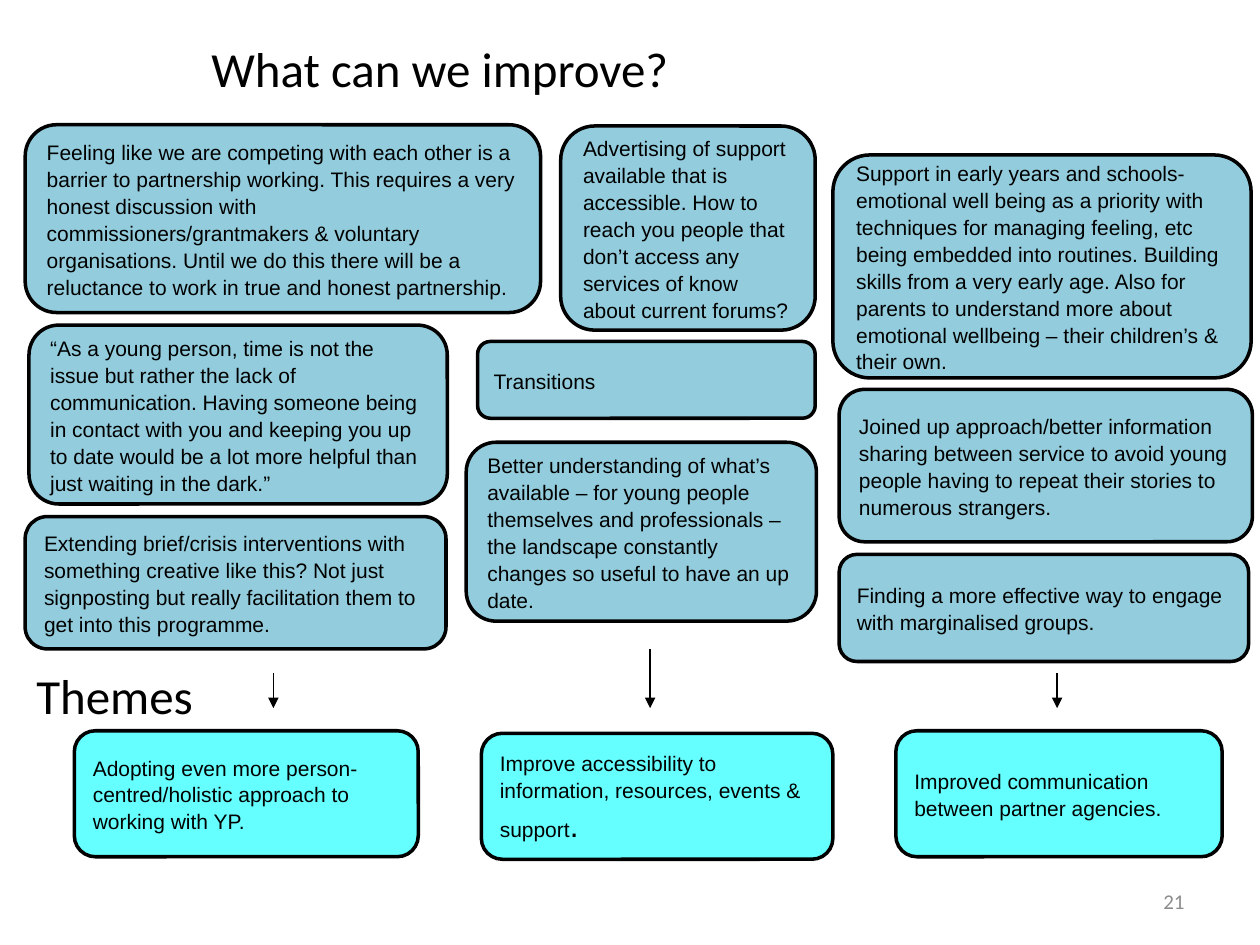
from lxml import etree
from pptx import Presentation
from pptx.dml.color import RGBColor
from pptx.enum.shapes import MSO_CONNECTOR, MSO_SHAPE
from pptx.enum.text import MSO_ANCHOR, PP_ALIGN
from pptx.oxml.ns import qn
from pptx.util import Inches, Pt

ROUNDED = MSO_SHAPE.ROUNDED_RECTANGLE
STRAIGHT = MSO_CONNECTOR.STRAIGHT
LEFT, CENTER, RIGHT = PP_ALIGN.LEFT, PP_ALIGN.CENTER, PP_ALIGN.RIGHT
TOP, MIDDLE = MSO_ANCHOR.TOP, MSO_ANCHOR.MIDDLE

COLORS = {"ink": "000000", "comment": "93CDDD", "theme": "66FFFF", "number": "8C8C8C"}

COMMENTS = [
    ((0.2, 0.99, 4.09, 1.49),
     "Feeling like we are competing with each other is a barrier to partnership working. "
     "This requires a very honest discussion with commissioners/grantmakers & voluntary "
     "organisations. Until we do this there will be a reluctance to work in true and "
     "honest partnership."),
    ((3.7, 3.51, 2.78, 1.42),
     "Better understanding of what’s available – for young people themselves and "
     "professionals – the landscape constantly changes so useful to have an up date."),
    ((3.79, 2.71, 2.68, 0.61), "Transitions"),
    ((6.61, 1.23, 3.32, 1.77),
     "Support in early years and schools-emotional well being as a priority with techniques "
     "for managing feeling, etc being embedded into routines. Building skills from a very "
     "early age. Also for parents to understand more about emotional wellbeing – their "
     "children’s & their own."),
    ((6.66, 4.4, 3.25, 0.85),
     "Finding a more effective way to engage with marginalised groups."),
    ((0.23, 2.58, 3.32, 1.42),
     "“As a young person, time is not the issue but rather the lack of communication. Having "
     "someone being in contact with you and keeping you up to date would be a lot more "
     "helpful than just waiting in the dark.”"),
    ((4.45, 1, 2.02, 1.62),
     "Advertising of support available that is accessible. How to reach you people that "
     "don’t access any services of know about current forums?"),
    ((6.66, 3.09, 3.28, 1.21),
     "Joined up approach/better information sharing between service to avoid young people "
     "having to repeat their stories to numerous strangers."),
    ((0.2, 4.1, 3.34, 1.05),
     "Extending brief/crisis interventions with something creative like this? Not just "
     "signposting but really facilitation them to get into this programme."),
]
THEMES = [
    ((0.59, 5.8, 2.73, 1),
     [("Adopting even more person-centred/holistic approach to working with YP.", 12)]),
    ((3.82, 5.82, 2.79, 1),
     [("Improve accessibility to information, resources, events & support", 12), (".", 18)]),
    ((7.11, 5.8, 2.59, 1),
     [("Improved communication between partner agencies.", 12)]),
]
LABELS = [
    ((0.02, 0.29, 6.94, 0.49), "What can we improve?",
     {"size": 28, "align": CENTER, "anchor": MIDDLE}),
    ((7.17, 6.95, 2.33, 0.4), "21",
     {"size": 12, "color": "number", "align": RIGHT, "anchor": MIDDLE}),
    ((0.19, 5.23, 1.57, 0.57), "Themes", {"size": 28}),
]
ARROW_BOTTOM = 5.62
ARROWS = [(2.17, 5.34), (5.16, 5.15), (8.39, 5.34)]


def rgb(name):
    return RGBColor.from_string(COLORS[name])


def write(shape, spans, font="Calibri", color="ink", align=LEFT, anchor=TOP,
          line_spacing=None, space_after=None):
    frame = shape.text_frame
    frame.word_wrap = True
    frame.vertical_anchor = anchor
    para = frame.paragraphs[0]
    para.alignment = align
    para.line_spacing = line_spacing
    para.space_after = space_after
    for text, size in spans:
        span = para.add_run()
        span.text = text
        span.font.name = font
        span.font.size = Pt(size)
        span.font.color.rgb = rgb(color)


def add_label(page, place, text, size, **style):
    box = page.shapes.add_textbox(*map(Inches, place))
    write(box, [(text, size)], **style)


def add_card(page, place, spans, fill):
    card = page.shapes.add_shape(ROUNDED, *map(Inches, place))
    card.shadow.inherit = False
    card.fill.solid()
    card.fill.fore_color.rgb = rgb(fill)
    card.line.color.rgb = rgb("ink")
    card.line.width = Pt(2)
    write(card, spans, font="Arial", anchor=MIDDLE, line_spacing=1.07, space_after=Pt(8))


def add_arrow(page, x, top):
    arrow = page.shapes.add_connector(
        STRAIGHT, Inches(x), Inches(top), Inches(x), Inches(ARROW_BOTTOM))
    arrow.line.color.rgb = rgb("ink")
    arrow.line.width = Pt(0.75)
    etree.SubElement(arrow.line._get_or_add_ln(), qn("a:tailEnd"), type="triangle")
    etree.SubElement(arrow._element.spPr, qn("a:effectLst"))


def main():
    deck = Presentation()
    deck.slide_width, deck.slide_height = Inches(10), Inches(7.5)
    page = deck.slides.add_slide(deck.slide_layouts[6])
    for place, text, style in LABELS:
        add_label(page, place, text, **style)
    for place, text in COMMENTS:
        add_card(page, place, [(text, 12)], "comment")
    for place, spans in THEMES:
        add_card(page, place, spans, "theme")
    for x, top in ARROWS:
        add_arrow(page, x, top)
    deck.save("out.pptx")


if __name__ == "__main__":
    main()
